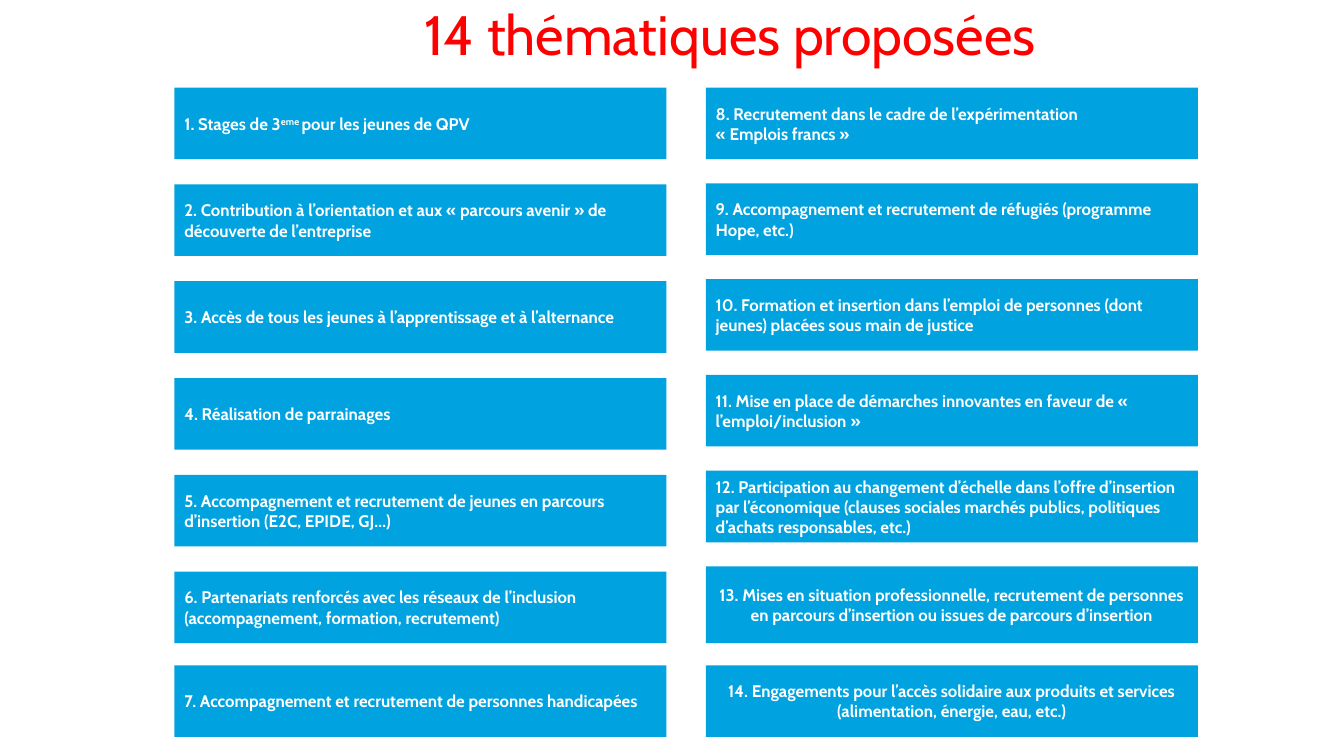
from pptx import Presentation
from pptx.dml.color import RGBColor
from pptx.enum.shapes import MSO_SHAPE
from pptx.enum.text import MSO_ANCHOR, PP_ALIGN
from pptx.util import Inches, Pt

# Content: a theme is a list of paragraphs, "^" surrounds superscript
TITLE = "14 thématiques proposées"
LEFT_THEMES = [
    ["1. Stages de 3^eme ^pour les jeunes de QPV"],
    ["2. Contribution à l’orientation et aux « parcours avenir » de découverte de l’entreprise"],
    ["3. Accès de tous les jeunes à l’apprentissage et à l’alternance"],
    ["4. Réalisation de parrainages"],
    ["5. Accompagnement et recrutement de jeunes en parcours d’insertion (E2C, EPIDE, GJ…)"],
    ["6. Partenariats renforcés avec les réseaux de l’inclusion (accompagnement, formation, recrutement)"],
    ["7. Accompagnement et recrutement de personnes handicapées"],
]
RIGHT_THEMES = [
    ["8. Recrutement dans le cadre de l’expérimentation", "« Emplois francs »"],
    ["9. Accompagnement et recrutement de réfugiés (programme Hope, etc.)"],
    ["10. Formation et insertion dans l’emploi de personnes (dont jeunes) placées sous main de justice"],
    ["11. Mise en place de démarches innovantes en faveur de « l’emploi/inclusion »"],
    ["12. Participation au changement d’échelle dans l’offre d’insertion par l’économique "
     "(clauses sociales marchés publics, politiques d’achats responsables, etc.)"],
    ["13. Mises en situation professionnelle, recrutement de personnes en parcours d’insertion "
     "ou issues de parcours d’insertion"],
    ["14. Engagements pour l’accès solidaire aux produits et services (alimentation, énergie, eau, etc.)"],
]
CENTERED = ("13.", "14.")
TALL = "13."

COLORS = {"title": "FF0000", "box": "00A3E0", "text": "FFFFFF"}
FONT = "Cabin"

# Layout in inches: left edge, row step and themes of each column
COLUMNS = [(1.73, 0.96, LEFT_THEMES), (7.0, 0.95, RIGHT_THEMES)]
FIRST_TOP, LAST_TOP = 0.87, 6.6
BOX_WIDTH, BOX_HEIGHT, TALL_HEIGHT = 4.88, 0.71, 0.76


def style(paragraph, size, color, bold, alignment):
    paragraph.alignment = alignment
    paragraph.font.name = FONT
    paragraph.font.size = Pt(size)
    paragraph.font.bold = bold
    paragraph.font.color.rgb = RGBColor.from_string(COLORS[color])


def set_frame(frame, side, vertical):
    frame.word_wrap = True
    frame.vertical_anchor = MSO_ANCHOR.MIDDLE
    frame.margin_left = frame.margin_right = Inches(side)
    frame.margin_top = frame.margin_bottom = Inches(vertical)


def add_theme(slide, left, top, theme):
    number = theme[0].split()[0]
    height = TALL_HEIGHT if number == TALL else BOX_HEIGHT
    box = slide.shapes.add_shape(MSO_SHAPE.RECTANGLE, Inches(left), Inches(top),
                                 Inches(BOX_WIDTH), Inches(height))
    box.shadow.inherit = False
    box.fill.solid()
    box.fill.fore_color.rgb = RGBColor.from_string(COLORS["box"])
    box.line.fill.background()
    set_frame(box.text_frame, 0.1, 0.1)
    alignment = PP_ALIGN.CENTER if number in CENTERED else PP_ALIGN.LEFT
    for i, line in enumerate(theme):
        paragraph = box.text_frame.add_paragraph() if i else box.text_frame.paragraphs[0]
        style(paragraph, 12, "text", True, alignment)
        for j, part in enumerate(line.split("^")):
            run = paragraph.add_run()
            run.text = part
            if j % 2:
                run.font._element.set("baseline", "30000")


def main():
    prs = Presentation()
    prs.slide_width, prs.slide_height = Inches(13.33), Inches(7.5)
    slide = prs.slides.add_slide(prs.slide_layouts[6])

    # Two columns of themes, the last row shared
    for left, step, themes in COLUMNS:
        for row, theme in enumerate(themes):
            last = row == len(themes) - 1
            add_theme(slide, left, LAST_TOP if last else FIRST_TOP + row * step, theme)

    # Title
    title = slide.shapes.add_textbox(Inches(2.24), Inches(0.03), Inches(10), Inches(0.69))
    set_frame(title.text_frame, 0.1, 0.05)
    heading = title.text_frame.paragraphs[0]
    heading.text = TITLE
    heading.line_spacing = 0.9
    style(heading, 39.6, "title", False, PP_ALIGN.CENTER)

    prs.save("out.pptx")


if __name__ == "__main__":
    main()
